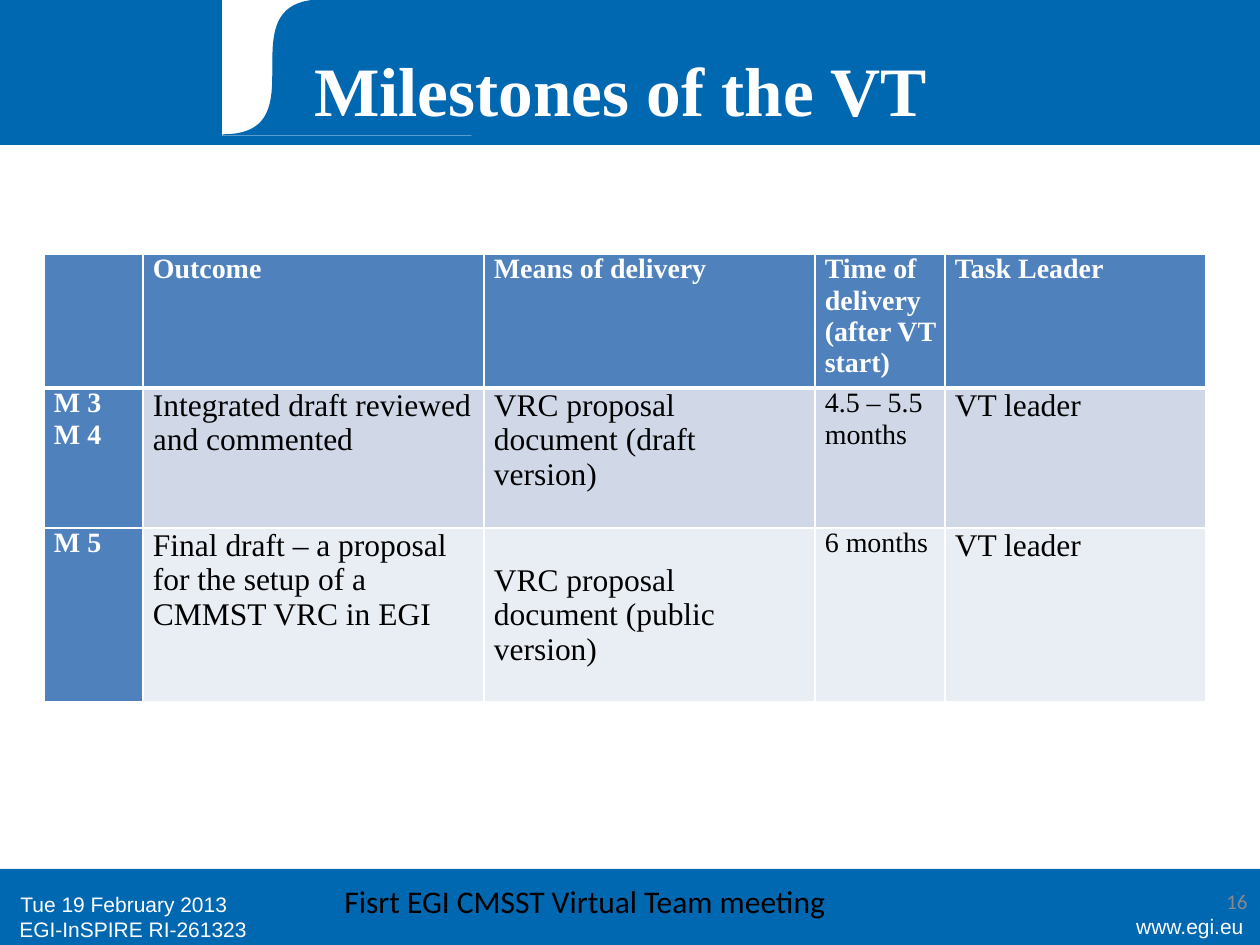
from lxml import etree
from pptx import Presentation
from pptx.dml.color import RGBColor
from pptx.enum.shapes import MSO_SHAPE
from pptx.enum.text import MSO_ANCHOR, MSO_AUTO_SIZE, PP_ALIGN
from pptx.oxml.ns import qn
from pptx.util import Pt

PX = 914400 // 126
RECTANGLE = MSO_SHAPE.RECTANGLE
TOP, MIDDLE = MSO_ANCHOR.TOP, MSO_ANCHOR.MIDDLE
LEFT, CENTER, RIGHT = PP_ALIGN.LEFT, PP_ALIGN.CENTER, PP_ALIGN.RIGHT
NO_AUTOFIT = MSO_AUTO_SIZE.NONE
TITLE_ONLY = 5
COLORS = {
    "brand": "0067B1", "white": "FFFFFF", "black": "000000", "number": "898989",
    "header": "4F81BD", "band_dark": "D0D8E8", "band_light": "E9EDF4",
}
SERIF, SANS, FOOTER_FONT = "Times New Roman", "Arial", "Calibri"

COLUMN_WIDTHS = [99, 341, 331, 130, 261]
ROW_HEIGHTS = [134, 140, 174]
MILESTONES = [
    ["", "Outcome", "Means of delivery", "Time of delivery (after VT start)", "Task Leader"],
    ["M 3\vM 4", "Integrated draft reviewed and commented",
     "VRC proposal document (draft version)", "4.5 – 5.5 months", "VT leader"],
    ["M 5", "Final draft – a proposal for the setup of a CMMST VRC in EGI",
     "VRC proposal document (public version)", "6 months", "VT leader"],
]
MEANS_COLUMN, TIME_COLUMN = 2, 3
LOWERED_CELL, LOWERED_BY = (2, 2), 35


def rgb(name):
    return RGBColor.from_string(COLORS[name])


def emu(box):
    return [length * PX for length in box]


def paint(shape, color, outlined=True):
    shape.shadow.inherit = False
    shape.fill.solid()
    shape.fill.fore_color.rgb = rgb(color)
    if outlined:
        shape.line.color.rgb = rgb(color)
        shape.line.width = Pt(0.75)
    else:
        shape.line.fill.background()


def add_block(slide, box, color, outlined=True):
    paint(slide.shapes.add_shape(RECTANGLE, *emu(box)), color, outlined)


def write(frame, text, size, font, color, bold=False, align=LEFT):
    frame.text = text
    paragraph = frame.paragraphs[0]
    paragraph.alignment = align
    for run in paragraph.runs:
        run.font.size = Pt(size)
        run.font.name = font
        run.font.bold = bold
        run.font.color.rgb = rgb(color)


def add_label(slide, box, text, size, font, color, align=LEFT, anchor=TOP):
    frame = slide.shapes.add_textbox(*emu(box)).text_frame
    frame.word_wrap = True
    frame.vertical_anchor = anchor
    write(frame, text, size, font, color, align=align)


def curve(start, control_1, control_2, end, steps=40):
    """Return points along a cubic Bezier curve."""
    points = []
    for step in range(steps + 1):
        t = step / steps
        weights = ((1 - t) ** 3, 3 * t * (1 - t) ** 2, 3 * t * t * (1 - t), t ** 3)
        points.append(tuple(
            sum(weight * value for weight, value in zip(weights, values))
            for values in zip(start, control_1, control_2, end)))
    return points


def add_header(slide, box):
    left, top, width, height = box
    add_block(slide, box, "brand")

    tab_left, tab_width, tab_height = left + 223, 248, 135
    add_block(slide, (tab_left, top, tab_width, tab_height), "white")
    tab_right, tab_bottom, bend = tab_left + tab_width + 1, top + tab_height, tab_left + 100
    swoosh = curve((tab_left, tab_bottom), (bend, tab_bottom), (tab_left, top), (bend, top))
    outline = [emu(point) for point in [(tab_right, tab_bottom), *swoosh]]
    builder = slide.shapes.build_freeform(tab_right * PX, top * PX)
    builder.add_line_segments(outline, close=True)
    paint(builder.convert_to_shape(), "brand")

    title = slide.shapes.title
    slide.shapes._spTree.append(title._element)  # bring in front of the banner
    title.left, title.top, title.width, title.height = emu((left + 184, top + 45, 873, 87))
    frame = title.text_frame
    frame.auto_size = NO_AUTOFIT
    frame.vertical_anchor = MIDDLE
    write(frame, "Milestones of the VT", 39.6, SERIF, "white", bold=True, align=CENTER)


def add_borders(cell, widths):
    """Draw white borders, with widths in points keyed by side: L, R, T, B."""
    properties = cell._tc.get_or_add_tcPr()
    for side, width in widths.items():
        border = etree.SubElement(properties, qn(f"a:ln{side}"), w=str(Pt(width)))
        fill = etree.SubElement(border, qn("a:solidFill"))
        etree.SubElement(fill, qn("a:srgbClr"), val=COLORS["white"])


def add_milestones(slide, box):
    table = slide.shapes.add_table(len(ROW_HEIGHTS), len(COLUMN_WIDTHS), *emu(box)).table
    table.horz_banding = False
    for column, width in zip(table.columns, COLUMN_WIDTHS):
        column.width = width * PX
    for row, height in zip(table.rows, ROW_HEIGHTS):
        row.height = height * PX

    for r, texts in enumerate(MILESTONES):
        for c, text in enumerate(texts):
            cell = table.cell(r, c)
            is_heading = r == 0 or c == 0
            is_small = is_heading or c == TIME_COLUMN
            cell.margin_left = 10 * PX
            cell.margin_right = (60 if c == MEANS_COLUMN else 7) * PX
            cell.margin_top = LOWERED_BY * PX if (r, c) == LOWERED_CELL else 0
            cell.margin_bottom = 0
            write(cell.text_frame, text, 16 if is_small else 18, SERIF,
                  "white" if is_heading else "black", bold=is_heading)
            if is_small:
                cell.text_frame.paragraphs[0].space_after = Pt(6)
            add_borders(cell, {"L": 1, "R": 1, "T": 3 if r == 1 else 1, "B": 3 if r == 0 else 1})
            band = "band_dark" if r == 1 else "band_light"
            cell.fill.solid()
            cell.fill.fore_color.rgb = rgb("header" if is_heading else band)


def add_footer(slide, box):
    left, top, width, height = box
    right = left + width
    add_block(slide, box, "brand", outlined=False)
    add_label(slide, (right - 203, top + 38, 199, 39), "www.egi.eu", 12, SANS, "white", RIGHT)
    add_label(slide, (left + 7, top + 41, 315, 39), "EGI-InSPIRE RI-261323", 12, SANS, "white")
    add_label(slide, (right - 293, top + 7, 293, 50), "16", 12, FOOTER_FONT, "number",
              RIGHT, MIDDLE)
    add_label(slide, (left + 8, top + 10, 294, 50), "Tue 19 February 2013", 12, SANS, "white",
              anchor=MIDDLE)
    add_label(slide, (left + 332, top + 7, 714, 50), "Fisrt EGI CMSST Virtual Team meeting",
              18, FOOTER_FONT, "black")


def main():
    presentation = Presentation()
    presentation.slide_width, presentation.slide_height = emu((1260, 945))
    slide = presentation.slides.add_slide(presentation.slide_layouts[TITLE_ONLY])
    add_header(slide, (0, 0, 1260, 144))
    add_milestones(slide, (44, 254, sum(COLUMN_WIDTHS), sum(ROW_HEIGHTS)))
    add_footer(slide, (0, 869, 1260, 76))
    presentation.save("out.pptx")


if __name__ == "__main__":
    main()
